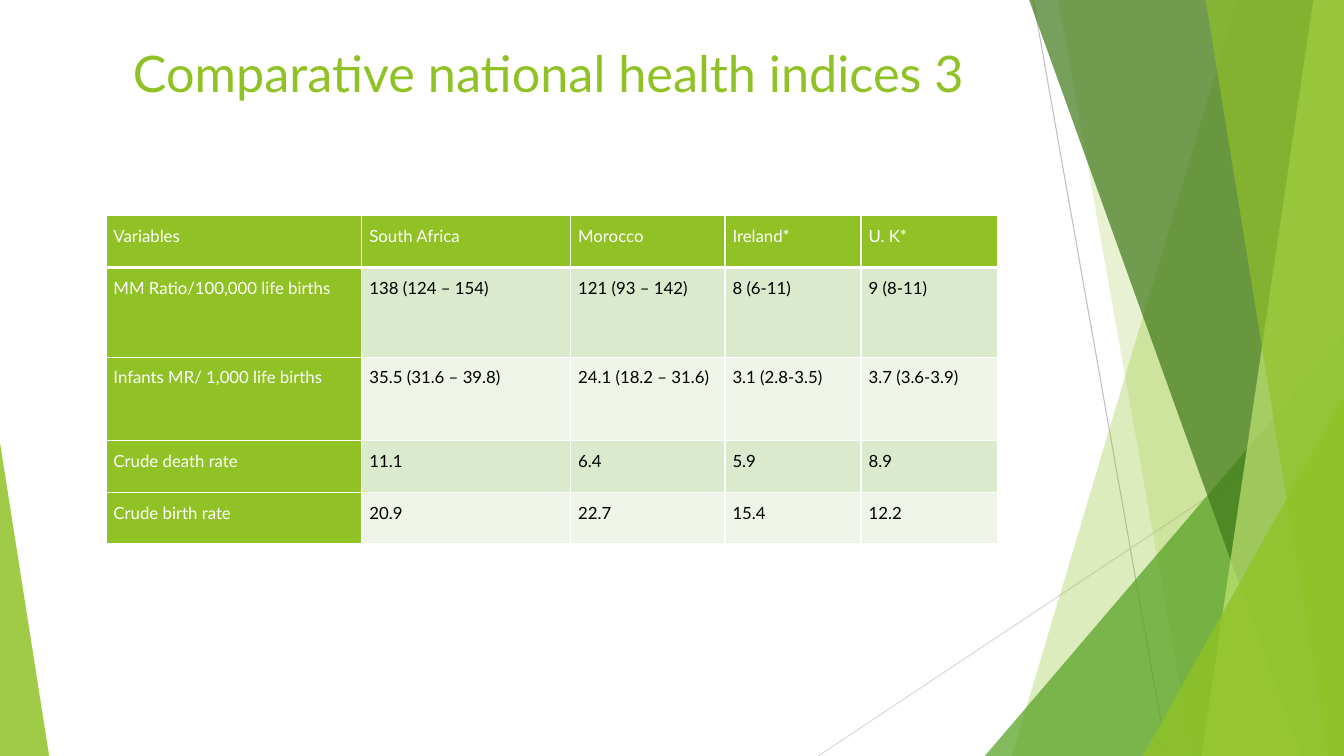
from lxml.etree import SubElement
from pptx import Presentation
from pptx.dml.color import RGBColor
from pptx.enum.shapes import MSO_CONNECTOR, MSO_SHAPE
from pptx.enum.text import MSO_ANCHOR, PP_ALIGN
from pptx.oxml.ns import qn
from pptx.util import Cm, Pt

LIME = RGBColor(0x90, 0xC2, 0x26)
GREEN = RGBColor(0x54, 0xA0, 0x21)
DARK_GREEN = RGBColor(0x3F, 0x78, 0x19)
PALE_LIME = RGBColor(0xC0, 0xE4, 0x74)
BAND_DARK = RGBColor(0xDB, 0xE9, 0xCD)
BAND_LIGHT = RGBColor(0xEE, 0xF4, 0xE8)
GREY = RGBColor(0xBF, 0xBF, 0xBF)
LIGHT_GREY = RGBColor(0xD9, 0xD9, 0xD9)
WHITE = RGBColor(0xFF, 0xFF, 0xFF)
BLACK = RGBColor(0, 0, 0)

WIDTH, HEIGHT = 33.87, 19.05
COLUMN_WIDTHS = [6.45, 5.26, 3.89, 3.43, 3.43]
ROW_HEIGHTS = [1.3, 2.26, 2.11, 1.3, 1.3]
INDICES = [
    ["Variables", "South Africa", "Morocco", "Ireland*", "U. K*"],
    ["MM Ratio/100,000 life births", "138 (124 – 154)", "121 (93 – 142)", "8 (6-11)", "9 (8-11)"],
    ["Infants MR/ 1,000 life births", "35.5 (31.6 – 39.8)", "24.1 (18.2 – 31.6)",
     "3.1 (2.8-3.5)", "3.7 (3.6-3.9)"],
    ["Crude death rate", "11.1", "6.4", "5.9", "8.9"],
    ["Crude birth rate", "20.9", "22.7", "15.4", "12.2"],
]


def set_format(target, values):
    for name, value in values.items():
        setattr(target, name, value)


class SlideBuilder:
    """Holds the current slide and the style shared by its elements."""

    font_name = "Lato"
    cell_format = {"margin_left": Cm(0.19), "margin_right": Cm(0.19),
                   "margin_top": 0, "margin_bottom": 0, "vertical_anchor": MSO_ANCHOR.TOP}

    def __init__(self, deck):
        self.slide = deck.slides.add_slide(deck.slide_layouts[5])
        self.shapes = self.slide.shapes

    def add_text(self, frame, text, size, color, **para_format):
        para = frame.paragraphs[0]
        set_format(para, para_format)
        span = para.add_run()
        span.text = text
        set_format(span.font, {"name": self.font_name, "size": Pt(size)})
        span.font.color.rgb = color

    def title(self, text, left, top, width, height):
        box = self.shapes.title
        set_format(box, {"left": Cm(left), "top": Cm(top), "width": Cm(width), "height": Cm(height)})
        set_format(box.text_frame, {"word_wrap": True, "vertical_anchor": MSO_ANCHOR.TOP})
        self.add_text(box.text_frame, text, 36, LIME, alignment=PP_ALIGN.CENTER)

    def line(self, start, end, color):
        connector = self.shapes.add_connector(
            MSO_CONNECTOR.STRAIGHT, *(Cm(value) for value in start + end))
        connector.line.color.rgb = color
        connector.line.width = Pt(0.75)
        SubElement(connector.element.spPr, qn("a:effectLst"))

    def paint(self, shape, color, opacity):
        """Fill a shape with a see-through colour; opacity is a percentage."""
        shape.shadow.inherit = False
        shape.line.fill.background()
        shape.fill.solid()
        shape.fill.fore_color.rgb = color
        tint = shape.element.spPr.find(qn("a:solidFill"))[0]
        SubElement(tint, qn("a:alpha"), val=str(opacity * 1000))

    def shard(self, top_left, bottom_left, color, opacity):
        """Draw a full-height panel with a slanted left side, ending at the right slide edge."""
        corners = [(top_left, -0.02), (WIDTH, -0.02), (WIDTH, HEIGHT), (bottom_left, HEIGHT)]
        points = [(Cm(x), Cm(y)) for x, y in corners]
        outline = self.shapes.build_freeform(*points[0])
        outline.add_line_segments(points[1:], close=True)
        self.paint(outline.convert_to_shape(), color, opacity)

    def corner(self, left, top, width, apex, color, opacity):
        """Draw a right triangle standing on the bottom slide edge."""
        triangle = self.shapes.add_shape(
            MSO_SHAPE.ISOSCELES_TRIANGLE, Cm(left), Cm(top), Cm(width), Cm(HEIGHT - top))
        triangle.adjustments[0] = apex
        self.paint(triangle, color, opacity)

    def border(self, cell, bottom_width):
        properties = cell._tc.get_or_add_tcPr()
        for side, width in {"L": 1, "R": 1, "T": 1, "B": bottom_width}.items():
            edge = SubElement(properties, qn(f"a:ln{side}"), w=str(Pt(width)))
            SubElement(SubElement(edge, qn("a:solidFill")), qn("a:srgbClr"), val=str(WHITE))

    def table(self, rows, left, top, widths, heights):
        table = self.shapes.add_table(
            len(rows), len(widths), Cm(left), Cm(top), Cm(sum(widths)), Cm(sum(heights))).table
        for column, width in zip(table.columns, widths):
            column.width = Cm(width)
        for row, height in zip(table.rows, heights):
            row.height = Cm(height)
        for r, texts in enumerate(rows):
            for c, text in enumerate(texts):
                cell = table.cell(r, c)
                heading = r == 0 or c == 0
                set_format(cell, self.cell_format)
                self.border(cell, 3 if r == 0 else 1)
                cell.fill.solid()
                band = BAND_DARK if r % 2 else BAND_LIGHT
                cell.fill.fore_color.rgb = LIME if heading else band
                self.add_text(cell.text_frame, text, 12, WHITE if heading else BLACK, line_spacing=1.5)


def main():
    deck = Presentation()
    set_format(deck, {"slide_width": Cm(WIDTH), "slide_height": Cm(HEIGHT)})
    page = SlideBuilder(deck)

    page.line((26.04, 0), (29.41, HEIGHT), GREY)
    page.line((WIDTH, 10.24), (20.62, HEIGHT), LIGHT_GREY)
    page.shard(31.19, 25.5, LIME, 30)
    page.shard(26.67, 30.05, LIME, 20)
    page.corner(24.82, 8.46, 9.05, 1, GREEN, 72)
    page.shard(25.93, 32.79, DARK_GREEN, 70)
    page.shard(33.1, 30.28, PALE_LIME, 70)
    page.shard(30.38, 33.48, LIME, 65)
    page.corner(28.8, 9.98, 5.07, 1, LIME, 80)
    page.corner(0, 11.15, 1.24, 0, LIME, 85)

    page.title("Comparative national health indices 3", 1.88, 0.94, 23.88, 2.46)
    page.table(INDICES, 2.67, 5.44, COLUMN_WIDTHS, ROW_HEIGHTS)
    deck.save("out.pptx")


if __name__ == "__main__":
    main()
